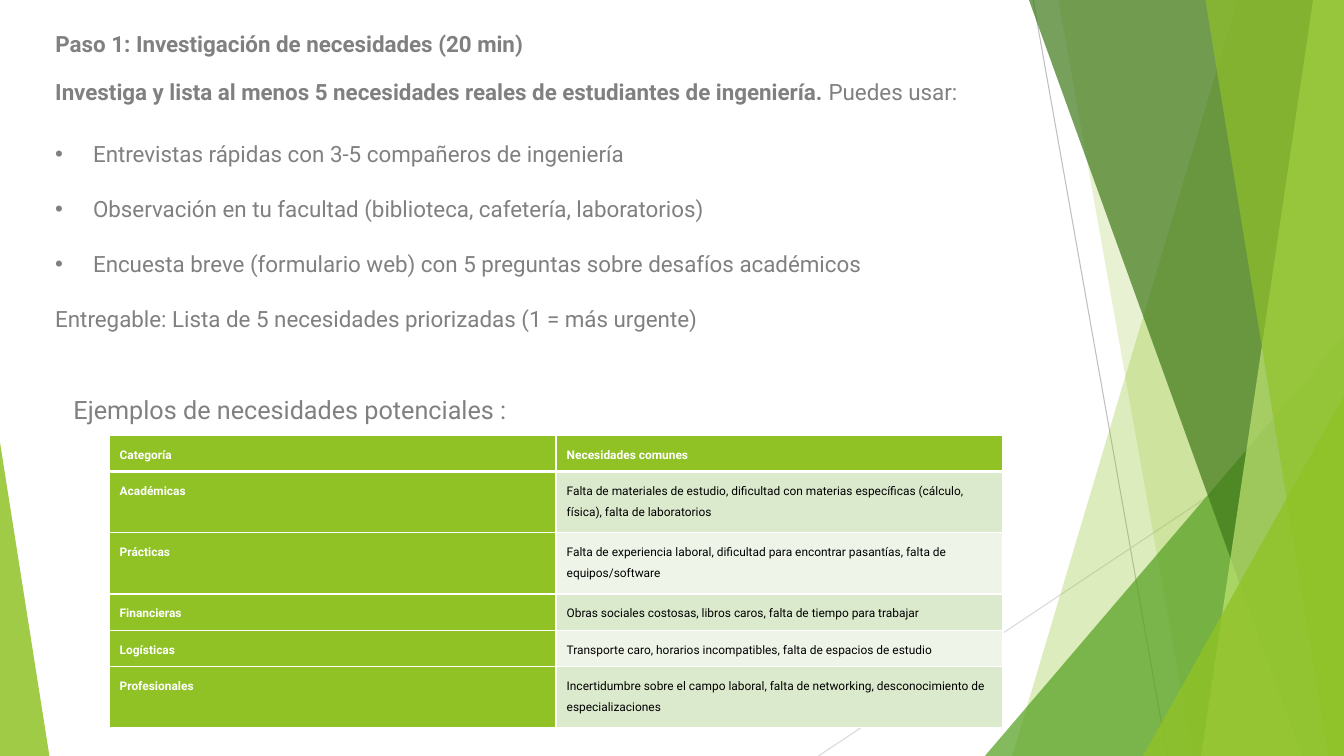
from lxml import etree
from pptx import Presentation
from pptx import util as u
from pptx.dml.color import RGBColor
from pptx.enum import shapes, text
from pptx.oxml import ns

LIME = RGBColor(0x90, 0xC2, 0x26)
PALE_LIME = RGBColor(0xC0, 0xE4, 0x74)
GREEN = RGBColor(0x54, 0xA0, 0x21)
DARK_GREEN = RGBColor(0x3F, 0x78, 0x19)
BAND_DARK = RGBColor(0xDB, 0xE9, 0xCD)
BAND_LIGHT = RGBColor(0xEE, 0xF4, 0xE8)
GRAY = RGBColor(0x80, 0x80, 0x80)
LINE_GRAY = RGBColor(0xBF, 0xBF, 0xBF)
LINE_PALE = RGBColor(0xD9, 0xD9, 0xD9)
WHITE = RGBColor(0xFF, 0xFF, 0xFF)
BLACK = RGBColor(0, 0, 0)

WIDTH, HEIGHT = 960, 540

GUIDES = [((738, 0), (833.8, 540), LINE_GRAY), ((960, 290), (584.6, 540), LINE_PALE)]
BACK_PANES = [(884.2, 723, LIME, 30), (756, 851.8, LIME, 20)]
FRONT_PANES = [(735.1, 929.5, DARK_GREEN, 70), (938.2, 858.2, PALE_LIME, 70),
               (861.1, 949, LIME, 65)]
MID_WEDGE = (703.5, 239.8, 256.5, 1, GREEN, 72)
FRONT_WEDGES = [(816.5, 283, 143.5, 1, LIME, 80), (0, 316, 35.3, 0, LIME, 85)]

STEP = "Paso 1: Investigación de necesidades (20 min)"
TASK = "Investiga y lista al menos 5 necesidades reales de estudiantes de ingeniería. "
METHODS = [
    "Entrevistas rápidas con 3-5 compañeros de ingeniería",
    "Observación en tu facultad (biblioteca, cafetería, laboratorios)",
    "Encuesta breve (formulario web) con 5 preguntas sobre desafíos académicos",
]
DELIVERABLE = "Entregable: Lista de 5 necesidades priorizadas (1 = más urgente)"
EXAMPLES = "Ejemplos de necesidades potenciales :"
NEEDS = [
    ("Categoría", "Necesidades comunes"),
    ("Académicas", "Falta de materiales de estudio, dificultad con materias específicas "
                   "(cálculo, física), falta de laboratorios"),
    ("Prácticas", "Falta de experiencia laboral, dificultad para encontrar pasantías, "
                  "falta de equipos/software"),
    ("Financieras", "Obras sociales costosas, libros caros, falta de tiempo para trabajar"),
    ("Logísticas", "Transporte caro, horarios incompatibles, falta de espacios de estudio"),
    ("Profesionales", "Incertidumbre sobre el campo laboral, falta de networking, "
                      "desconocimiento de especializaciones"),
]
SHORT_ROW, TALL_ROW = 25.9, 43.7
ROW_HEIGHTS = [SHORT_ROW, TALL_ROW, TALL_ROW, SHORT_ROW, SHORT_ROW, TALL_ROW]


def assign(target, **values):
    for name, value in values.items():
        setattr(target, name, value)


class SlideBuilder:
    font_name = "Roboto"

    def __init__(self, slide):
        self.slide = slide
        self.shapes = slide.shapes

    def guide(self, start, end, color):
        line = self.shapes.add_connector(
            shapes.MSO_CONNECTOR.STRAIGHT, *(u.Pt(v) for v in (*start, *end)))
        line.line.color.rgb = color
        line.line.width = u.Pt(0.75)
        etree.SubElement(line._element.spPr, ns.qn("a:effectLst"))

    def paint(self, shape, color, opacity):
        shape.shadow.inherit = False
        shape.fill.solid()
        shape.fill.fore_color.rgb = color
        shape.line.fill.background()
        tint = shape._element.spPr.find(ns.qn("a:solidFill"))[0]
        etree.SubElement(tint, ns.qn("a:alpha"), val=str(opacity * 1000))

    def pane(self, top_x, bottom_x, color, opacity):
        outline = self.shapes.build_freeform(top_x, -0.5, scale=u.Pt(1))
        outline.add_line_segments([(WIDTH, -0.5), (WIDTH, HEIGHT), (bottom_x, HEIGHT)])
        self.paint(outline.convert_to_shape(), color, opacity)

    def wedge(self, left, top, width, apex, color, opacity):
        triangle = self.shapes.add_shape(
            shapes.MSO_SHAPE.ISOSCELES_TRIANGLE,
            *(u.Pt(v) for v in (left, top, width, HEIGHT - top)))
        triangle.adjustments[0] = apex
        self.paint(triangle, color, opacity)

    def fill_paragraph(self, paragraph, runs, size, color=GRAY, **spacing):
        assign(paragraph, alignment=text.PP_ALIGN.LEFT, **spacing)
        for words, bold in runs:
            run = paragraph.add_run()
            run.text = words
            assign(run.font, name=self.font_name, size=u.Pt(size), bold=bold)
            run.font.color.rgb = color

    def frame(self, shape, top_inset=3.6):
        assign(shape.text_frame, word_wrap=True, auto_size=text.MSO_AUTO_SIZE.NONE,
               vertical_anchor=text.MSO_ANCHOR.TOP, margin_left=u.Pt(7.2),
               margin_right=u.Pt(7.2), margin_top=u.Pt(top_inset), margin_bottom=u.Pt(3.6))
        return shape.text_frame

    def title(self, words, left, top, width, height):
        heading = self.shapes.title
        assign(heading, left=u.Pt(left), top=u.Pt(top), width=u.Pt(width), height=u.Pt(height))
        self.fill_paragraph(self.frame(heading).paragraphs[0], [(words, True)], 16,
                            line_spacing=1.5, space_before=u.Pt(0))

    def textbox(self, left, top, width, height, **options):
        box = self.shapes.add_textbox(*(u.Pt(v) for v in (left, top, width, height)))
        return self.frame(box, **options)

    def bullet(self, paragraph):
        props = paragraph._p.get_or_add_pPr()
        props.set("marL", str(u.Pt(27)))
        props.set("indent", str(u.Pt(-27)))
        etree.SubElement(props, ns.qn("a:buFont"), typeface="Arial")
        etree.SubElement(props, ns.qn("a:buChar"), char="•")

    def cell(self, cell, words, fill, color, bold, bottom_border):
        props = cell._tc.get_or_add_tcPr()
        for side, weight in zip("LRTB", (1, 1, 1, bottom_border)):
            border = etree.SubElement(props, ns.qn("a:ln" + side), w=str(u.Pt(weight)))
            solid = etree.SubElement(border, ns.qn("a:solidFill"))
            etree.SubElement(solid, ns.qn("a:srgbClr"), val=str(WHITE))
        cell.fill.solid()
        cell.fill.fore_color.rgb = fill
        assign(cell, margin_left=u.Pt(7.7), margin_right=u.Pt(7.7),
               margin_top=u.Pt(4.3), margin_bottom=u.Pt(4.3))
        self.fill_paragraph(cell.text_frame.paragraphs[0], [(words, bold)], 8.5, color,
                            line_spacing=1.5, space_after=u.Pt(6))

    def table(self, rows, heights, left, top, width):
        grid = self.shapes.add_table(
            len(rows), len(rows[0]),
            *(u.Pt(v) for v in (left, top, width, sum(heights)))).table
        for r, (row, height) in enumerate(zip(rows, heights)):
            grid.rows[r].height = u.Pt(height)
            for c, words in enumerate(row):
                label = r == 0 or c == 0
                band = BAND_DARK if r % 2 else BAND_LIGHT
                self.cell(grid.cell(r, c), words, LIME if label else band,
                          WHITE if label else BLACK, label, 1 if r else 3)


def main():
    deck = Presentation()
    assign(deck, slide_width=u.Pt(WIDTH), slide_height=u.Pt(HEIGHT))
    page = SlideBuilder(deck.slides.add_slide(deck.slide_layouts[5]))

    for guide in GUIDES:
        page.guide(*guide)
    for pane in BACK_PANES:
        page.pane(*pane)
    page.wedge(*MID_WEDGE)
    for pane in FRONT_PANES:
        page.pane(*pane)
    for wedge in FRONT_WEDGES:
        page.wedge(*wedge)

    page.title(STEP, 32.4, 8.6, 689, 36)
    instructions = page.textbox(32.4, 42.8, 689, 241.6)
    page.fill_paragraph(instructions.paragraphs[0], [(TASK, True), ("Puedes usar:", False)],
                        16, line_spacing=1.5, space_after=u.Pt(10.5))
    for item in [*METHODS, DELIVERABLE]:
        paragraph = instructions.add_paragraph()
        if item in METHODS:
            page.bullet(paragraph)
        page.fill_paragraph(paragraph, [(item, False)], 16, line_spacing=1.5,
                            space_before=u.Pt(5.2), space_after=u.Pt(5.2))

    page.table(NEEDS, ROW_HEIGHTS, 77.8, 311, 638.6)
    examples = page.textbox(45.4, 276.5, 905.8, 51, top_inset=5)
    page.fill_paragraph(examples.paragraphs[0], [(EXAMPLES, False)], 18)
    deck.save("out.pptx")


if __name__ == "__main__":
    main()
